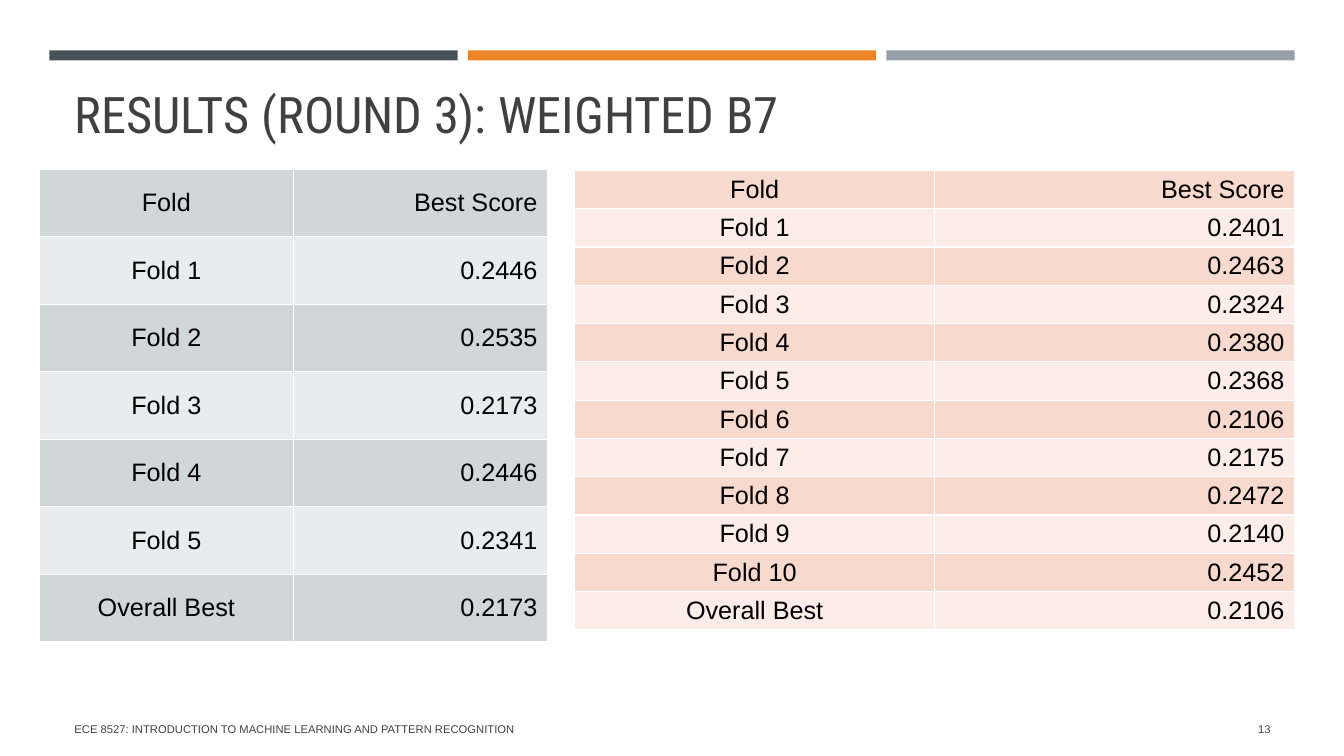
from lxml.etree import SubElement
from pptx import Presentation
from pptx.dml.color import RGBColor
from pptx.enum.shapes import MSO_SHAPE
from pptx.enum.text import MSO_ANCHOR, MSO_AUTO_SIZE, PP_ALIGN
from pptx.oxml.ns import qn
from pptx.util import Pt

EMU_PER_PX = 9144  # 100 px to the inch
DARK_GRAY = "404040"
BAR_COLORS = ("465359", "ED8428", "969FA7")
FIVE_FOLD_SCORES = ("0.2446", "0.2535", "0.2173", "0.2446", "0.2341")
TEN_FOLD_SCORES = ("0.2401", "0.2463", "0.2324", "0.2380", "0.2368",
                   "0.2106", "0.2175", "0.2472", "0.2140", "0.2452")


def px(*lengths):
    return [length * EMU_PER_PX for length in lengths]


def color(hex_string):
    return RGBColor.from_string(hex_string)


def write(text_frame, text, size, font_name, hex_color, alignment=PP_ALIGN.LEFT):
    text_frame.text = text
    paragraph = text_frame.paragraphs[0]
    paragraph.alignment = alignment
    font = paragraph.runs[0].font
    font.size = Pt(size)
    font.name = font_name
    font.color.rgb = color(hex_color)


def add_top_bars(slide, left, top, width, height):
    gap = 10
    bar_width = (width - gap * (len(BAR_COLORS) - 1)) // len(BAR_COLORS)
    for index, bar_color in enumerate(BAR_COLORS):
        bar_left = left + index * (bar_width + gap)
        bar = slide.shapes.add_shape(MSO_SHAPE.RECTANGLE, *px(bar_left, top, bar_width, height))
        bar.shadow.inherit = False
        bar.fill.solid()
        bar.fill.fore_color.rgb = color(bar_color)
        bar.line.fill.background()


def place_title(slide, text, left, top, width, height):
    title = slide.shapes.title
    title.left, title.top, title.width, title.height = px(left, top, width, height)
    frame = title.text_frame
    write(frame, text, 36, "Roboto Condensed", DARK_GRAY)
    frame.word_wrap = True
    frame.auto_size = MSO_AUTO_SIZE.NONE
    frame.vertical_anchor = MSO_ANCHOR.BOTTOM
    frame.paragraphs[0].line_spacing = 0.9


def add_white_borders(cell):
    properties = cell._tc.get_or_add_tcPr()
    for side in ("a:lnL", "a:lnR", "a:lnT", "a:lnB"):
        line = SubElement(properties, qn(side), w=str(Pt(1)))
        fill = SubElement(line, qn("a:solidFill"))
        SubElement(fill, qn("a:srgbClr"), val="FFFFFF")


def add_score_table(slide, scores, best_score, band_colors, left, top, width, row_height):
    rows = [("Fold", "Best Score")]
    rows += [(f"Fold {number}", score) for number, score in enumerate(scores, 1)]
    rows.append(("Overall Best", best_score))
    frame = slide.shapes.add_table(len(rows), 2, *px(left, top, width, row_height * len(rows)))
    table = frame.table
    table.first_row = table.horz_banding = False
    for row_index, row in enumerate(rows):
        table.rows[row_index].height = row_height * EMU_PER_PX
        for column_index, text in enumerate(row):
            cell = table.cell(row_index, column_index)
            alignment = (PP_ALIGN.CENTER, PP_ALIGN.RIGHT)[column_index]
            write(cell.text_frame, text, 18, "Arial", "000000", alignment)
            cell.vertical_anchor = MSO_ANCHOR.MIDDLE
            cell.margin_top, cell.margin_bottom = px(2, 2)
            add_white_borders(cell)
            cell.fill.solid()
            cell.fill.fore_color.rgb = color(band_colors[row_index % 2])


def add_footer_text(slide, text, alignment, left, top, width, height):
    frame = slide.shapes.add_textbox(*px(left, top, width, height)).text_frame
    frame.word_wrap = True
    frame.vertical_anchor = MSO_ANCHOR.MIDDLE
    write(frame, text, 8, "Arial", DARK_GRAY, alignment)


def build_results_slide(presentation):
    slide = presentation.slides.add_slide(presentation.slide_layouts[5])
    slide.background.fill.solid()
    slide.background.fill.fore_color.rgb = color("FFFFFF")
    place_title(slide, "RESULTS (ROUND 3): WEIGHTED B7", 64, 79, 1207, 69)
    add_top_bars(slide, 49, 50, 1235, 10)
    add_score_table(slide, FIVE_FOLD_SCORES, "0.2173", ("D1D6D9", "E9ECED"), 39, 168, 504, 67)
    add_score_table(slide, TEN_FOLD_SCORES, "0.2106", ("F8D9CD", "FCEDE8"), 570, 169, 714, 38)
    add_footer_text(slide, "13", PP_ALIGN.RIGHT, 1155, 703, 115, 40)
    add_footer_text(slide, "ECE 8527: INTRODUCTION TO MACHINE LEARNING AND PATTERN RECOGNITION",
                    PP_ALIGN.LEFT, 64, 703, 756, 40)


def main():
    presentation = Presentation()
    presentation.slide_width, presentation.slide_height = px(1333, 750)
    build_results_slide(presentation)
    presentation.save("out.pptx")


if __name__ == "__main__":
    main()
